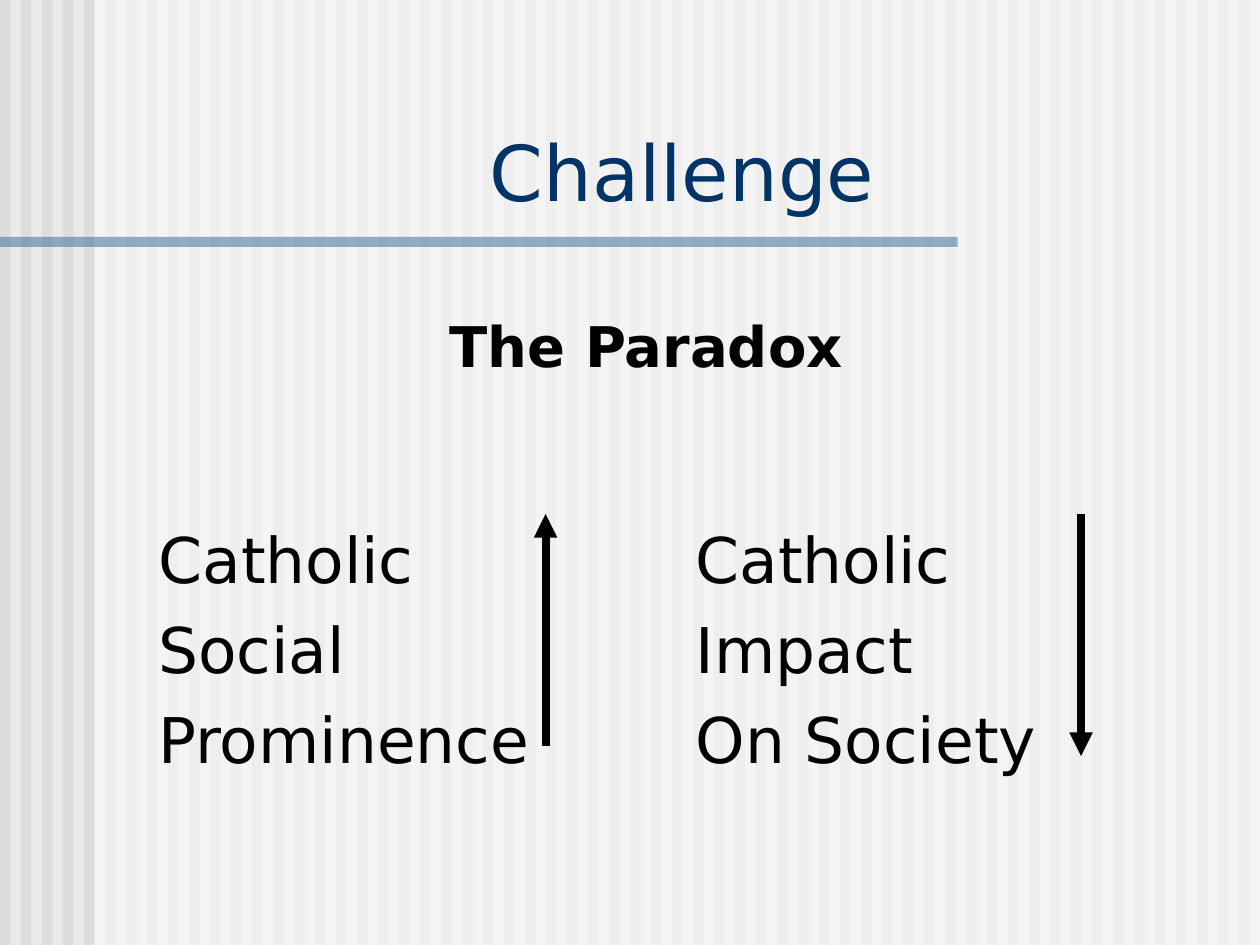
"""Build the Challenge slide: a paradox of two trends on a striped background."""
import pptx
import pptx.dml.color
import pptx.enum.shapes
import pptx.enum.text
import pptx.oxml
import pptx.oxml.ns
import pptx.util

Inches, Pt = pptx.util.Inches, pptx.util.Pt
ALIGN, ANCHOR = pptx.enum.text.PP_ALIGN, pptx.enum.text.MSO_ANCHOR
FIT = pptx.enum.text.MSO_AUTO_SIZE
FONT = "DejaVu Sans"
COLORS = {"back": "EAEAEA", "stripe": "DDDDDD", "veil": "FFFFFF",
          "rule": "336699", "title": "003366", "text": "000000"}

TITLE = ["Challenge"]
SUBTITLE = ["The Paradox"]
PROMINENCE = ["Catholic", "Social", "Prominence"]
IMPACT = ["Catholic", "Impact", "On Society"]
STRIPES, PITCH = 60, 1 / 6
PANELS = [("veil", (0.75, 0, 9.25, 7.5)), ("rule", (0, 1.88, 7.6, 0.08))]
ARROWS = [(4.33, 5.92, 4.08), (8.58, 4.08, 6)]

HEADING = {"size": Pt(44), "color": "title", "bold": False}
STRONG = {"size": Pt(32), "color": "text", "bold": True}
LISTING = {"size": Pt(36), "color": "text", "bold": False}
CENTERED = {"alignment": ALIGN.CENTER}
STACKED = {"alignment": ALIGN.LEFT, "space_before": Pt(8.4)}


def rgb(name):
    return pptx.dml.color.RGBColor.from_string(COLORS[name])


def add_xml(parent, tag, **attrs):
    el = pptx.oxml.parse_xml(f"<a:{tag} {pptx.oxml.ns.nsdecls('a')}/>")
    for key, value in attrs.items():
        el.set(key, value)
    parent.append(el)


def add_rect(shapes, box, color, alpha=None):
    s = shapes.add_shape(pptx.enum.shapes.MSO_SHAPE.RECTANGLE, *map(Inches, box))
    s.shadow.inherit = False
    s.line.fill.background()
    s.fill.solid()
    s.fill.fore_color.rgb = rgb(color)
    if alpha:
        clr = s._element.spPr.find(".//" + pptx.oxml.ns.qn("a:srgbClr"))
        add_xml(clr, "alpha", val=str(alpha * 1000))


def add_arrow(shapes, x, start, end):
    s = shapes.add_connector(pptx.enum.shapes.MSO_CONNECTOR.STRAIGHT,
                             *map(Inches, (x, start, x, end)))
    s.line.width = Pt(4.5)
    s.line.color.rgb = rgb("text")
    add_xml(s.line._get_or_add_ln(), "tailEnd", type="triangle")
    add_xml(s._element.spPr, "effectLst")


def write(sp, box, lines, font, para, anchor=ANCHOR.TOP, fit=FIT.NONE):
    sp.left, sp.top, sp.width, sp.height = map(Inches, box)
    tf = sp.text_frame
    for key, value in {"word_wrap": True, "vertical_anchor": anchor, "auto_size": fit}.items():
        setattr(tf, key, value)
    for i, line in enumerate(lines):
        p = tf.add_paragraph() if i else tf.paragraphs[0]
        for key, value in para.items():
            setattr(p, key, value)
        pPr = p._p.get_or_add_pPr()
        pPr.set("marL", "0")
        pPr.set("indent", "0")
        add_xml(pPr, "buNone")
        r = p.add_run()
        r.text = line
        r.font.name, r.font.size, r.font.bold = FONT, font["size"], font["bold"]
        r.font.color.rgb = rgb(font["color"])


def main():
    prs = pptx.Presentation()
    prs.slide_width, prs.slide_height = Inches(10), Inches(7.5)
    slide = prs.slides.add_slide(prs.slide_layouts[1])
    slide.background.fill.solid()
    slide.background.fill.fore_color.rgb = rgb("back")
    shapes = slide.shapes
    title, body = shapes.title, slide.placeholders[1]

    group = shapes.add_group_shape()
    for i in range(STRIPES):
        add_rect(group.shapes, (i * PITCH, 0, PITCH / 2, 7.5), "stripe")
    for color, box in PANELS:
        add_rect(shapes, box, color, alpha=50)
    for sp in (title, body):
        shapes._spTree.append(sp._element)

    write(title, (0.95, 0.94, 8.93, 0.83), TITLE, HEADING, CENTERED, ANCHOR.BOTTOM,
          FIT.SHAPE_TO_FIT_TEXT)
    write(body, (5.42, 4.08, 3.5, 2.25), IMPACT, LISTING, STACKED)
    write(shapes.add_textbox(0, 0, 0, 0), (1.16, 4.08, 3.5, 2.33), PROMINENCE, LISTING, STACKED)
    for arrow in ARROWS:
        add_arrow(shapes, *arrow)
    write(shapes.add_textbox(0, 0, 0, 0), (1.92, 2.42, 6.42, 0.63), SUBTITLE, STRONG, CENTERED,
          fit=FIT.SHAPE_TO_FIT_TEXT)
    prs.save("out.pptx")


if __name__ == "__main__":
    main()
